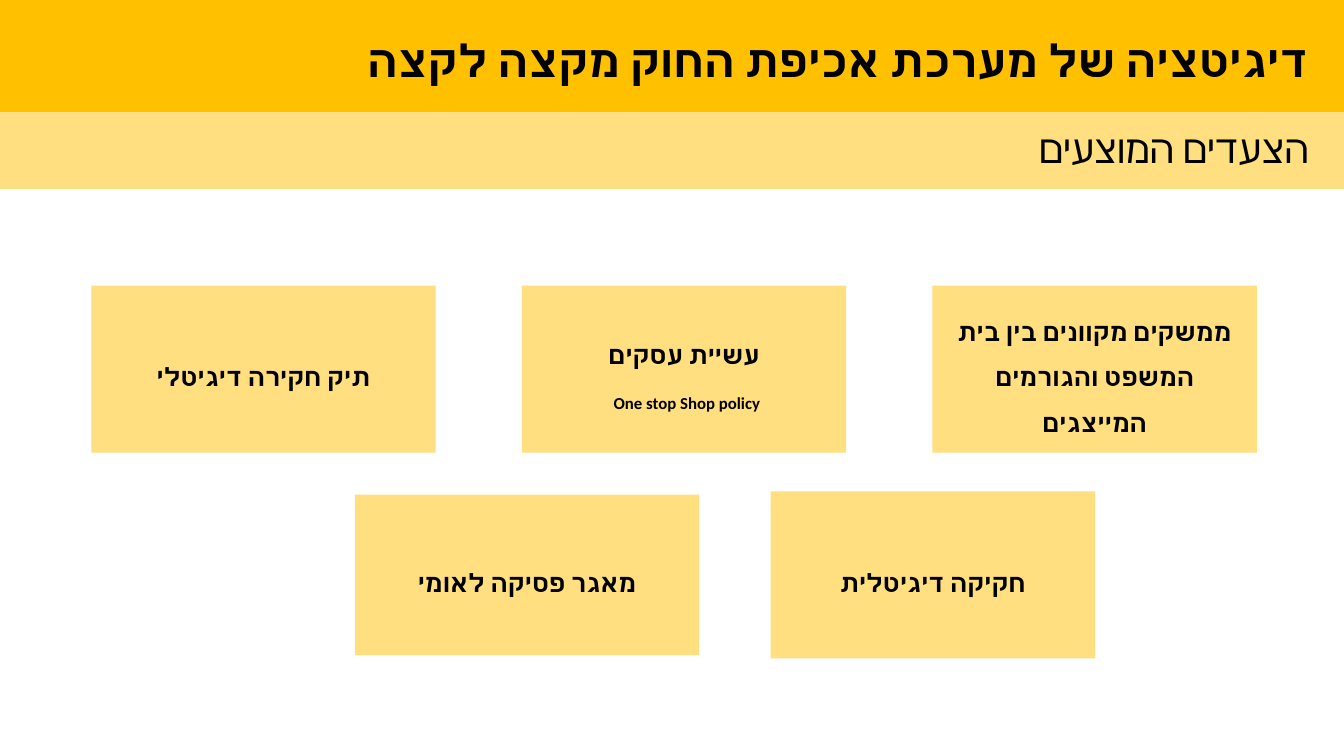
from lxml.etree import SubElement
from pptx import Presentation
from pptx.dml.color import RGBColor
from pptx.enum.shapes import MSO_SHAPE
from pptx.enum.text import MSO_ANCHOR, MSO_AUTO_SIZE, PP_ALIGN
from pptx.oxml.ns import qn
from pptx.util import Pt

EMU_PER_PX = 9525
SLIDE_WIDTH, SLIDE_HEIGHT = 1280, 720
FONT = "Calibri"
GOLD, PALE_GOLD, BLACK = "FFC000", "FFDF7F", "000000"

TITLE = "דיגיטציה של מערכת אכיפת החוק מקצה לקצה"
SUBTITLE = "הצעדים המוצעים"

CARD_HEIGHT = 159
# Each row: left edge, vertical centre, gap, cards as (width, height, lines)
CARD_ROWS = [
    (87, 351.5, 82, [
        (328, CARD_HEIGHT, [[("תיק חקירה דיגיטלי", 18)]]),
        (309, CARD_HEIGHT, [
            [("עשיית עסקים", 18)],
            [("One stop Shop policy", 12), (" ", 18)],
        ]),
        (309, CARD_HEIGHT, [[("ממשקים מקוונים בין בית המשפט והגורמים המייצגים", 18)]]),
    ]),
    (338, 547.5, 68, [
        (328, 153, [[("מאגר פסיקה לאומי", 18)]]),
        (309, CARD_HEIGHT, [[("חקיקה דיגיטלית", 18)]]),
    ]),
]


def px(length):
    return round(length * EMU_PER_PX)


def color(hex_string):
    return RGBColor.from_string(hex_string)


def add_block(slide, box, fill):
    block = slide.shapes.add_shape(MSO_SHAPE.RECTANGLE, *map(px, box))
    block.shadow.inherit = False
    block.fill.solid()
    block.fill.fore_color.rgb = color(fill)
    block.line.fill.background()
    return block


def write_rtl(paragraph, pieces, align, bold):
    """Fill a right-to-left paragraph with (text, size) pieces."""
    paragraph.alignment = align
    paragraph._p.get_or_add_pPr().set("rtl", "1")
    for text, size in pieces:
        run = paragraph.add_run()
        run.text = text
        run.font.name = FONT
        run.font.size = Pt(size)
        run.font.bold = bold
        run.font.color.rgb = color(BLACK)
        SubElement(run.font._element, qn("a:cs"), typeface=FONT)


def add_heading(slide, box, text, size, bold):
    frame = slide.shapes.add_textbox(*map(px, box)).text_frame
    frame.word_wrap = True
    frame.auto_size = MSO_AUTO_SIZE.SHAPE_TO_FIT_TEXT
    write_rtl(frame.paragraphs[0], [(text, size)], PP_ALIGN.RIGHT, bold)


def add_header(slide, left, top, width):
    title_height, subtitle_height = 107, 73
    subtitle_top = top + title_height
    add_block(slide, (left, top, width, title_height), GOLD)
    add_block(slide, (left, subtitle_top, width, subtitle_height), PALE_GOLD)
    add_heading(slide, (left + 75, top + 26, width - 99, 61), TITLE, 32, True)
    add_heading(slide, (left + 135, subtitle_top + 7, width - 159, 55), SUBTITLE, 28, False)


def add_card(slide, box, lines):
    frame = add_block(slide, box, PALE_GOLD).text_frame
    frame.word_wrap = True
    frame.vertical_anchor = MSO_ANCHOR.MIDDLE
    for index, pieces in enumerate(lines):
        paragraph = frame.add_paragraph() if index else frame.paragraphs[0]
        paragraph.line_spacing = 1.5
        write_rtl(paragraph, pieces, PP_ALIGN.CENTER, True)


def add_card_row(slide, left, middle, gap, cards):
    for width, height, lines in cards:
        add_card(slide, (left, middle - height / 2, width, height), lines)
        left += width + gap


def main():
    presentation = Presentation()
    presentation.slide_width = px(SLIDE_WIDTH)
    presentation.slide_height = px(SLIDE_HEIGHT)
    slide = presentation.slides.add_slide(presentation.slide_layouts[6])
    add_header(slide, 0, 0, SLIDE_WIDTH)
    for row in CARD_ROWS:
        add_card_row(slide, *row)
    presentation.save("out.pptx")


if __name__ == "__main__":
    main()
